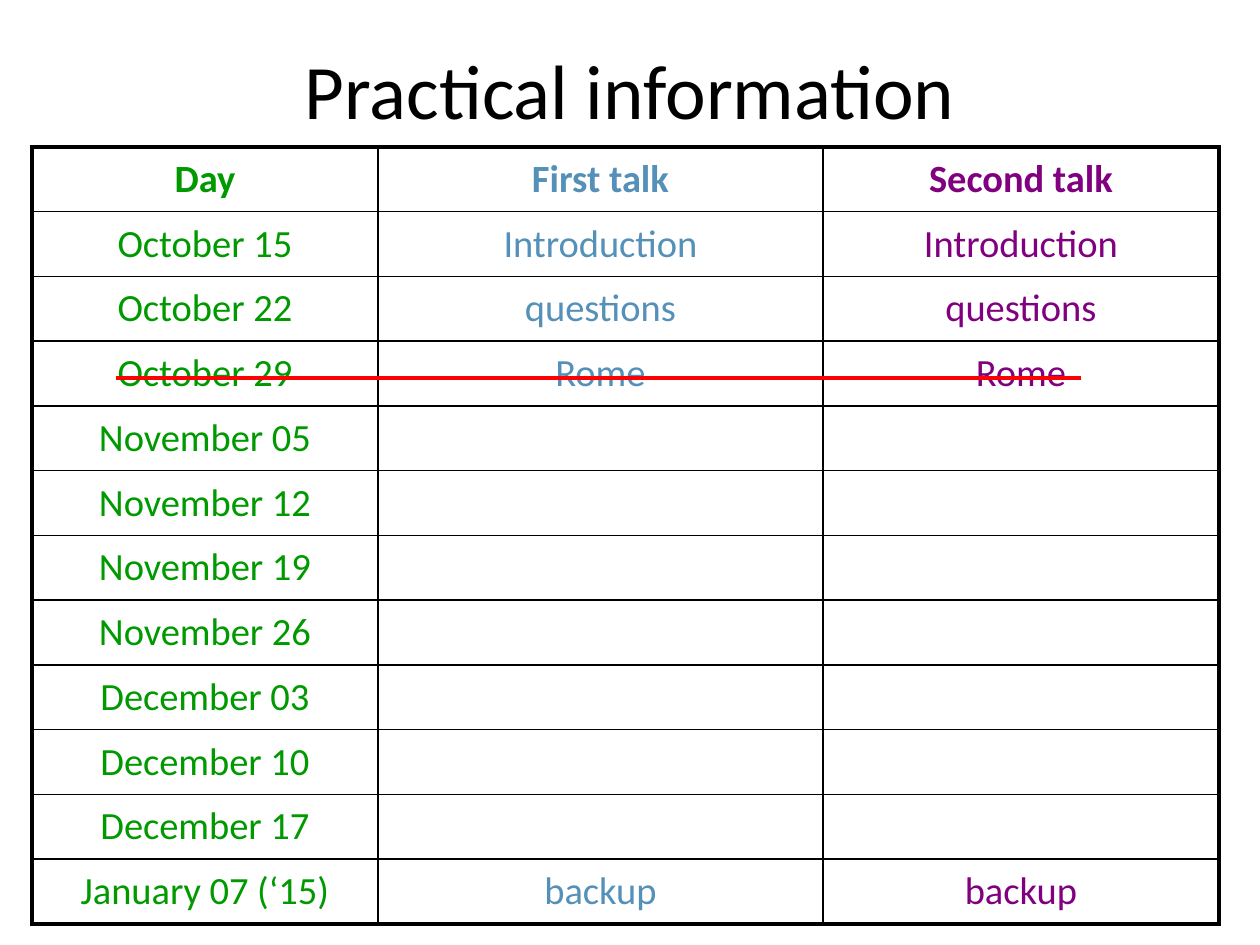
"""Build the practical information slide with its schedule of talks."""
from lxml import etree
from pptx import Presentation
from pptx.dml.color import RGBColor
from pptx.enum.shapes import MSO_CONNECTOR
from pptx.enum.text import MSO_ANCHOR, PP_ALIGN
from pptx.oxml.ns import qn
from pptx.util import Emu, Pt

CENTER = PP_ALIGN.CENTER
MIDDLE = MSO_ANCHOR.MIDDLE
STRAIGHT = MSO_CONNECTOR.STRAIGHT
BLACK = RGBColor(0x00, 0x00, 0x00)
GREEN = RGBColor(0x00, 0x99, 0x00)
BLUE = RGBColor(0x54, 0x90, 0xB8)
PURPLE = RGBColor(0x80, 0x00, 0x80)
RED = RGBColor(0xFF, 0x00, 0x00)
FONT = "Calibri"
COLUMN_COLORS = [GREEN, BLUE, PURPLE]
COLUMN_WIDTHS = [346, 445, 396]
TABLE_HEIGHT = 777
SCHEDULE = [
    ("Day", "First talk", "Second talk"),
    ("October 15", "Introduction", "Introduction"),
    ("October 22", "questions", "questions"),
    ("October 29", "Rome", "Rome"),
    ("November 05", "", ""),
    ("November 12", "", ""),
    ("November 19", "", ""),
    ("November 26", "", ""),
    ("December 03", "", ""),
    ("December 10", "", ""),
    ("December 17", "", ""),
    ("January 07 (‘15)", "backup", "backup"),
]


def px(n):
    return Emu(round(n * 914400 / 126))


def add_border(cell, side, width):
    ln = etree.SubElement(cell._tc.get_or_add_tcPr(), qn(f"a:ln{side}"), w=str(Pt(width)))
    fill = etree.SubElement(ln, qn("a:solidFill"))
    etree.SubElement(fill, qn("a:srgbClr"), val=str(BLACK))


prs = Presentation()
prs.slide_width, prs.slide_height = px(1260), px(945)
s = prs.slides.add_slide(prs.slide_layouts[5])

title = s.shapes.title
title.left, title.top, title.width, title.height = px(63), px(10), px(1134), px(158)
tf = title.text_frame
tf.text = "Practical information"
tf.vertical_anchor = MIDDLE
p = tf.paragraphs[0]
p.alignment = CENTER
r = p.runs[0]
r.font.name, r.font.size = FONT, Pt(44)
r.font.color.rgb = BLACK

rows, cols = len(SCHEDULE), len(COLUMN_WIDTHS)
table = s.shapes.add_table(
    rows, cols, px(32), px(147), px(sum(COLUMN_WIDTHS)), px(TABLE_HEIGHT)
).table
table.first_row = False
table.horz_banding = False
for column, width in zip(table.columns, COLUMN_WIDTHS):
    column.width = px(width)

for i, texts in enumerate(SCHEDULE):
    table.rows[i].height = px(TABLE_HEIGHT / rows)
    for j, text in enumerate(texts):
        cell = table.cell(i, j)
        cell.margin_left = cell.margin_right = px(10)
        cell.margin_top = cell.margin_bottom = px(3)
        cell.vertical_anchor = MIDDLE
        outer = {"L": j == 0, "R": j == cols - 1, "T": i == 0, "B": i == rows - 1}
        for side, is_outer in outer.items():
            add_border(cell, side, 2.25 if is_outer else 1)
        cell.fill.background()
        p = cell.text_frame.paragraphs[0]
        p.text = text
        p.alignment = CENTER
        before = etree.SubElement(p._p.get_or_add_pPr(), qn("a:spcBef"))
        etree.SubElement(before, qn("a:spcPct"), val="20000")
        for r in p.runs:
            r.font.name, r.font.size = FONT, Pt(22)
            r.font.bold = i == 0
            r.font.color.rgb = COLUMN_COLORS[j]

strike = s.shapes.add_connector(STRAIGHT, px(116), px(378), px(1081), px(378))
strike.line.color.rgb = RED
strike.line.width = Pt(2)
etree.SubElement(strike._element.spPr, qn("a:effectLst"))

prs.save("out.pptx")
